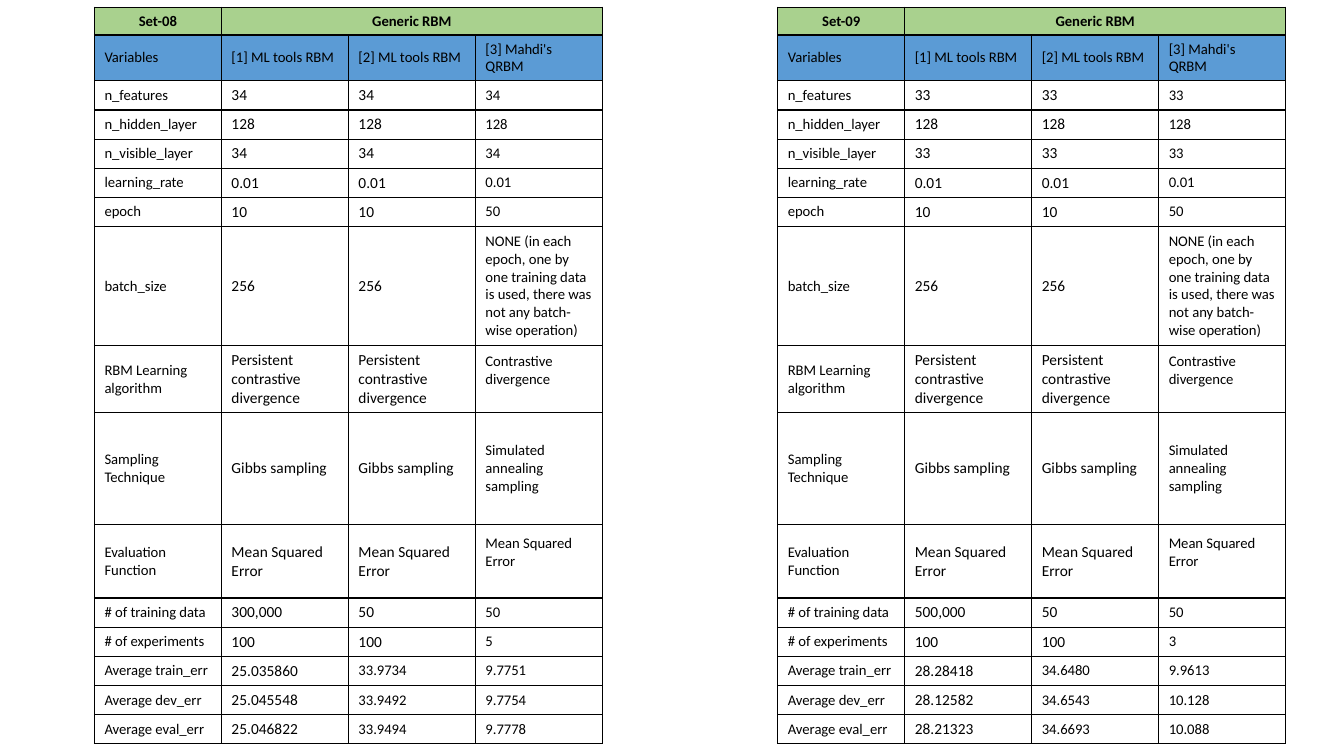
import dataclasses
import typing

import pptx
import pptx.dml.color
import pptx.enum.text
import pptx.oxml
import pptx.oxml.ns
import pptx.slide
import pptx.table
import pptx.util

Cm = pptx.util.Cm
Pt = pptx.util.Pt
RGBColor = pptx.dml.color.RGBColor
Align = pptx.enum.text.PP_ALIGN
Anchor = pptx.enum.text.MSO_ANCHOR


@dataclasses.dataclass(frozen=True)
class Theme:
    font: str = "Calibri"
    ink: str = "000000"
    set_fill: str = "A9D18E"
    heading_fill: str = "5B9BD5"
    size: float = 10.5
    value_size: float = 11
    border: float = 1


class Row(typing.NamedTuple):
    label: str
    values: tuple[str, str, str]
    height: float = 0.64
    last_column_raised: bool = False
    large_columns: tuple[int, ...] = (1, 2)


@dataclasses.dataclass(frozen=True)
class ExperimentSet:
    title: str
    left: float
    features: str
    training_data: str
    quantum_experiments: str
    train_err: tuple[str, str, str]
    dev_err: tuple[str, str, str]
    eval_err: tuple[str, str, str]


THEME = Theme()
TOP, COLUMN_WIDTH, TITLE_HEIGHT = 0.18, 3.2, 0.69
RAISED_MARGIN = 0.58

EXPERIMENT_SETS = (
    ExperimentSet("Set-08", 2.38, "34", "300,000", "5",
                  ("25.035860", "33.9734", "9.7751"),
                  ("25.045548", "33.9492", "9.7754"),
                  ("25.046822", "33.9494", "9.7778")),
    ExperimentSet("Set-09", 19.6, "33", "500,000", "3",
                  ("28.28418", "34.6480", "9.9613"),
                  ("28.12582", "34.6543", "10.128"),
                  ("28.21323", "34.6693", "10.088")),
)


def rows_of(experiment: ExperimentSet) -> list[Row]:
    features = (experiment.features,) * 3
    persistent = "Persistent contrastive divergence"
    gibbs = "Gibbs sampling"
    errors = {"train": experiment.train_err, "dev": experiment.dev_err,
              "eval": experiment.eval_err}
    return [
        Row("Variables", ("[1] ML tools RBM", "[2] ML tools RBM", "[3] Mahdi's QRBM"),
            1.02, large_columns=()),
        Row("n_features", features),
        Row("n_hidden_layer", ("128",) * 3),
        Row("n_visible_layer", features),
        Row("learning_rate", ("0.01",) * 3),
        Row("epoch", ("10", "10", "50")),
        Row("batch_size", ("256", "256",
                           "NONE (in each epoch, one by one training data is used, "
                           "there was not any batch-wise operation)"), 3),
        Row("RBM Learning algorithm", (persistent, persistent, "Contrastive divergence"),
            1.52, last_column_raised=True),
        Row("Sampling Technique", (gibbs, gibbs, "Simulated annealing sampling"), 2.82),
        Row("Evaluation Function", ("Mean Squared Error",) * 3, 1.85,
            last_column_raised=True),
        Row("# of training data", (experiment.training_data, "50", "50")),
        Row("# of experiments", ("100", "100", experiment.quantum_experiments)),
        *(Row(f"Average {phase}_err", values, large_columns=(1,))
          for phase, values in errors.items()),
    ]


def add_borders(cell: pptx.table._Cell) -> None:
    properties = cell._tc.get_or_add_tcPr()
    for side in "LRTB":
        properties.append(pptx.oxml.parse_xml(
            f'<a:ln{side} {pptx.oxml.ns.nsdecls("a")} w="{Pt(THEME.border)}">'
            f'<a:solidFill><a:srgbClr val="{THEME.ink}"/></a:solidFill></a:ln{side}>'))


def fill_cell(cell: pptx.table._Cell, text: str, size: float = THEME.size,
              fill: str | None = None, bold: bool = False,
              align: Align = Align.LEFT) -> None:
    cell.text = text
    cell.vertical_anchor = Anchor.MIDDLE
    paragraph = cell.text_frame.paragraphs[0]
    paragraph.alignment = align
    font = paragraph.runs[0].font
    for attribute, value in {"name": THEME.font, "size": Pt(size), "bold": bold}.items():
        setattr(font, attribute, value)
    font.color.rgb = RGBColor.from_string(THEME.ink)
    if fill:
        cell.fill.solid()
        cell.fill.fore_color.rgb = RGBColor.from_string(fill)
    else:
        cell.fill.background()


def add_experiment_table(slide: pptx.slide.Slide, experiment: ExperimentSet) -> None:
    rows = rows_of(experiment)
    heights = [TITLE_HEIGHT, *(row.height for row in rows)]
    table = slide.shapes.add_table(
        len(heights), 4, Cm(experiment.left), Cm(TOP),
        Cm(4 * COLUMN_WIDTH), Cm(sum(heights))).table
    for option in ("first_row", "horz_banding"):
        setattr(table, option, False)
    for table_row, height in zip(table.rows, heights):
        table_row.height = Cm(height)
    for cell in table.iter_cells():
        add_borders(cell)

    table.cell(0, 1).merge(table.cell(0, 3))
    for column, heading in enumerate((experiment.title, "Generic RBM")):
        fill_cell(table.cell(0, column), heading, fill=THEME.set_fill,
                  bold=True, align=Align.CENTER)
    for index, row in enumerate(rows, start=1):
        for column, text in enumerate((row.label, *row.values)):
            fill_cell(table.cell(index, column), text,
                      THEME.value_size if column in row.large_columns else THEME.size,
                      THEME.heading_fill if index == 1 else None)
        if row.last_column_raised:
            table.cell(index, 3).margin_bottom = Cm(RAISED_MARGIN)


def main() -> None:
    presentation = pptx.Presentation()
    presentation.slide_width = Cm(33.87)
    presentation.slide_height = Cm(19.05)
    slide = presentation.slides.add_slide(presentation.slide_layouts[6])
    for experiment in EXPERIMENT_SETS:
        add_experiment_table(slide, experiment)
    presentation.save("out.pptx")


if __name__ == "__main__":
    main()
